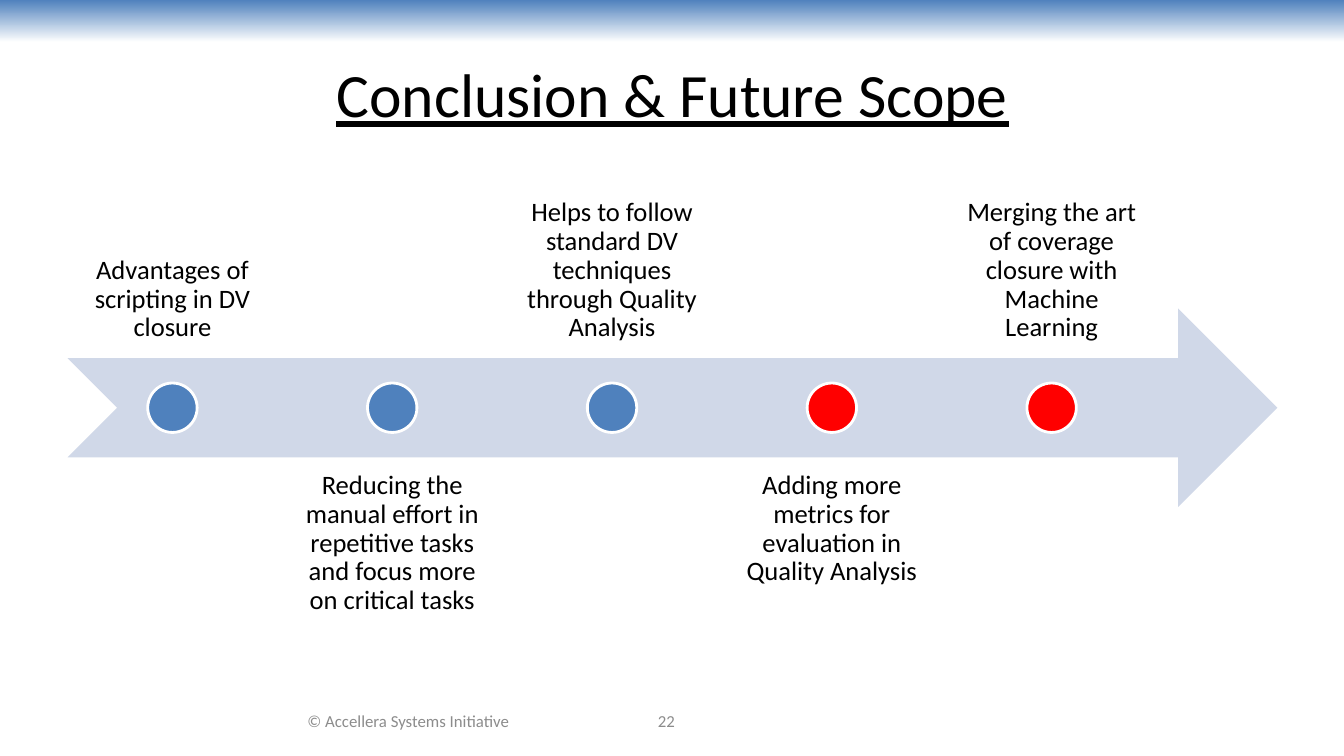
import pptx
import pptx.util
import pptx.dml.color
import pptx.enum.shapes
import pptx.enum.text

Inches = pptx.util.Inches
Pt = pptx.util.Pt
Shape = pptx.enum.shapes.MSO_SHAPE
Anchor = pptx.enum.text.MSO_ANCHOR


def color(value):
    return pptx.dml.color.RGBColor.from_string(value)


def write(shape, text, size, value, anchor, inset=0.1):
    frame = shape.text_frame
    frame.word_wrap = True
    frame.vertical_anchor = anchor
    frame.margin_left = frame.margin_right = Inches(inset)
    frame.margin_top = frame.margin_bottom = Inches(inset)
    paragraph = frame.paragraphs[0]
    paragraph.text = text
    paragraph.alignment = pptx.enum.text.PP_ALIGN.CENTER
    paragraph.font.name = "Calibri"
    paragraph.font.size = Pt(size)
    paragraph.font.color.rgb = color(value)
    return paragraph


presentation = pptx.Presentation()
presentation.slide_width = Inches(13.33)
presentation.slide_height = Inches(7.5)
slide = presentation.slides.add_slide(presentation.slide_layouts[5])
shapes = slide.shapes

banner = shapes.add_shape(Shape.RECTANGLE, 0, 0, presentation.slide_width, Inches(0.42))
banner.shadow.inherit = False
banner.line.fill.background()
banner.fill.gradient()
banner.fill.gradient_angle = 270
for stop, value, position in zip(banner.fill.gradient_stops, ["4F81BD", "FFFFFF"], [0, 1]):
    stop.color.rgb = color(value)
    stop.position = position

title = shapes.title
title.left, title.top = Inches(0.67), Inches(0.3)
title.width, title.height = Inches(12), Inches(1.25)
write(title, "Conclusion & Future Scope", 44, "000000", Anchor.MIDDLE).font.underline = True

arrow = shapes.add_shape(
    Shape.NOTCHED_RIGHT_ARROW, Inches(0.67), Inches(3.06), Inches(12), Inches(1.97)
)
arrow.shadow.inherit = False
arrow.fill.solid()
arrow.fill.fore_color.rgb = color("D0D8E8")
arrow.line.fill.background()

milestones = [
    ("Advantages of scripting in DV closure", "4F81BD"),
    ("Reducing the manual effort in repetitive tasks and focus more on critical tasks", "4F81BD"),
    ("Helps to follow standard DV techniques through Quality Analysis", "4F81BD"),
    ("Adding more metrics for evaluation in Quality Analysis", "FF0000"),
    ("Merging the art of coverage closure with Machine Learning", "FF0000"),
]
label_width = 2.08
dot_size = 0.49
for index, (text, value) in enumerate(milestones):
    left = 0.67 + 2.18 * index
    above = index % 2 == 0
    top = 1.58 if above else 4.53
    label = shapes.add_textbox(Inches(left), Inches(top), Inches(label_width), Inches(1.97))
    anchor = Anchor.BOTTOM if above else Anchor.TOP
    write(label, text, 19, "000000", anchor, 0.15).line_spacing = 0.9

    dot_left = left + (label_width - dot_size) / 2
    dot = shapes.add_shape(
        Shape.OVAL, Inches(dot_left), Inches(3.8), Inches(dot_size), Inches(dot_size)
    )
    dot.shadow.inherit = False
    dot.fill.solid()
    dot.fill.fore_color.rgb = color(value)
    dot.line.color.rgb = color("FFFFFF")
    dot.line.width = Pt(2)

for text, left, width in [("© Accellera Systems Initiative", 2.44, 3.22), ("22", 5.33, 2.56)]:
    footer = shapes.add_textbox(Inches(left), Inches(6.95), Inches(width), Inches(0.4))
    write(footer, text, 12, "8C8C8C", Anchor.MIDDLE)

presentation.save("out.pptx")
